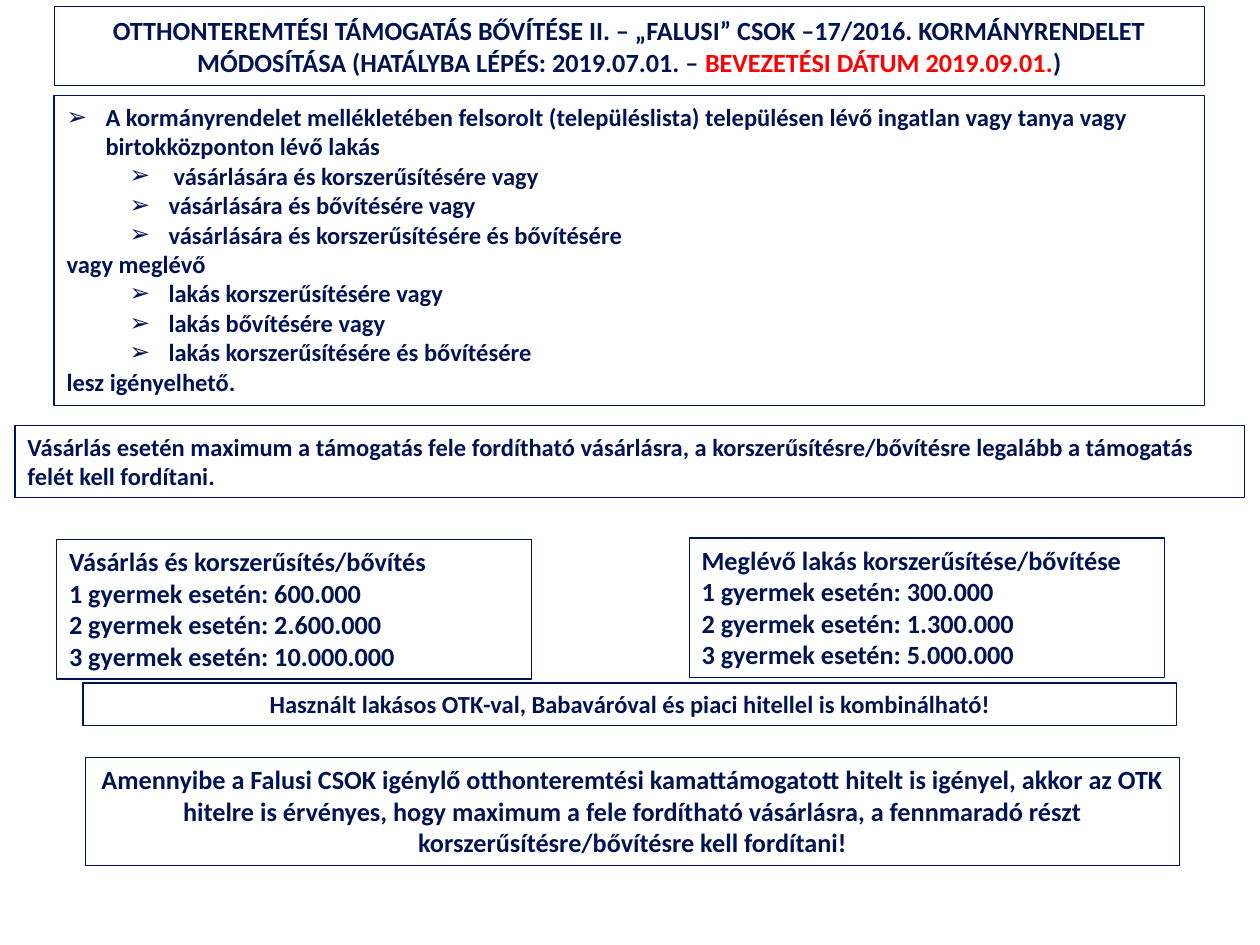
from lxml.etree import SubElement
from pptx import Presentation
from pptx.dml.color import RGBColor
from pptx.enum.text import MSO_ANCHOR as Anchor, MSO_AUTO_SIZE as AutoSize, PP_ALIGN as Align
from pptx.oxml.ns import qn
from pptx.util import Inches, Pt

NAVY = "001454"
RED = "FF0000"


def color(hex_value):
    return RGBColor.from_string(hex_value)


def add_text(paragraph, text, font="Calibri", size=14, fill=NAVY, bold=True):
    run = paragraph.add_run()
    run.text = text
    run.font.name = font
    run.font.size = Pt(size)
    run.font.bold = bold
    run.font.color.rgb = color(fill)


def add_bullet(paragraph, margin, hanging):
    properties = paragraph._p.get_or_add_pPr()
    properties.set("marL", str(Inches(margin)))
    properties.set("indent", str(-Inches(hanging)))
    SubElement(properties, qn("a:buFont"), typeface="Arial")
    SubElement(properties, qn("a:buChar"), char="➢")


class SlideBuilder:
    border = NAVY
    border_width = 0.75

    def __init__(self, slide):
        self.slide = slide

    def outline(self, shape):
        shape.line.color.rgb = color(self.border)
        shape.line.width = Pt(self.border_width)

    def title(self, left, top, width, height, parts, size):
        heading = self.slide.shapes.title
        heading.left, heading.top = Inches(left), Inches(top)
        heading.width, heading.height = Inches(width), Inches(height)
        self.outline(heading)
        frame = heading.text_frame
        frame.word_wrap = True
        frame.auto_size = AutoSize.NONE
        frame.vertical_anchor = Anchor.MIDDLE
        paragraph = frame.paragraphs[0]
        paragraph.alignment = Align.CENTER
        for text, fill in parts:
            add_text(paragraph, text, size=size, fill=fill)

    def box(self, left, top, width, height, lines, size=14, align=Align.LEFT):
        box = self.slide.shapes.add_textbox(
            Inches(left), Inches(top), Inches(width), Inches(height))
        self.outline(box)
        frame = box.text_frame
        frame.word_wrap = True
        frame.auto_size = AutoSize.SHAPE_TO_FIT_TEXT
        for index, (text, level, hanging) in enumerate(lines):
            paragraph = frame.add_paragraph() if index else frame.paragraphs[0]
            paragraph.alignment = align
            if level is not None:
                paragraph.level = level
                add_bullet(paragraph, level * 0.5 + hanging, hanging)
            add_text(paragraph, text, size=size)


def plain(*texts):
    return [(text, None, 0) for text in texts]


def bullets(level, *texts, hanging=0.31):
    return [(text, level, hanging) for text in texts]


def main():
    prs = Presentation()
    prs.slide_width, prs.slide_height = Inches(10), Inches(7.5)
    builder = SlideBuilder(prs.slides.add_slide(prs.slide_layouts[5]))

    builder.title(0.43, 0.05, 9.13, 0.63, [
        ("OTTHONTEREMTÉSI TÁMOGATÁS BŐVÍTÉSE II. – „FALUSI” CSOK –17/2016. "
         "KORMÁNYRENDELET MÓDOSÍTÁSA (HATÁLYBA LÉPÉS: 2019.07.01. – ", NAVY),
        ("BEVEZETÉSI DÁTUM 2019.09.01.", RED),
        (")", NAVY),
    ], size=15)

    builder.box(0.12, 3.38, 9.76, 0.57, plain(
        "Vásárlás esetén maximum a támogatás fele fordítható vásárlásra, a "
        "korszerűsítésre/bővítésre legalább a támogatás felét kell fordítani."))

    grants = [
        (0.45, 4.28, "Vásárlás és korszerűsítés/bővítés",
         ["600.000", "2.600.000", "10.000.000"]),
        (5.47, 4.27, "Meglévő lakás korszerűsítése/bővítése",
         ["300.000", "1.300.000", "5.000.000"]),
    ]
    for left, top, purpose, amounts in grants:
        rows = [f"{children} gyermek esetén: {amount}"
                for children, amount in enumerate(amounts, 1)]
        builder.box(left, top, 3.77, 1.11, plain(purpose, *rows), size=15)

    builder.box(0.66, 5.42, 8.68, 0.34, plain(
        "Használt lakásos OTK-val, Babaváróval és piaci hitellel is kombinálható!"),
        align=Align.CENTER)

    eligibility = [
        *bullets(0, "A kormányrendelet mellékletében felsorolt (településlista) településen "
                    "lévő ingatlan vagy tanya vagy birtokközponton lévő lakás"),
        *bullets(1, "vásárlására és korszerűsítésére vagy", hanging=0.35),
        *bullets(1, "vásárlására és bővítésére vagy",
                 "vásárlására és korszerűsítésére és bővítésére"),
        *plain("vagy meglévő"),
        *bullets(1, "lakás korszerűsítésére vagy", "lakás bővítésére vagy",
                 "lakás korszerűsítésére és bővítésére"),
        *plain("lesz igényelhető."),
    ]
    builder.box(0.43, 0.76, 9.13, 2.46, eligibility)

    builder.box(0.68, 6.01, 8.68, 0.86, plain(
        "Amennyibe a Falusi CSOK igénylő otthonteremtési kamattámogatott hitelt is "
        "igényel, akkor az OTK hitelre is érvényes, hogy maximum a fele fordítható "
        "vásárlásra, a fennmaradó részt korszerűsítésre/bővítésre kell fordítani!"),
        size=15, align=Align.CENTER)

    prs.save("out.pptx")


if __name__ == "__main__":
    main()
